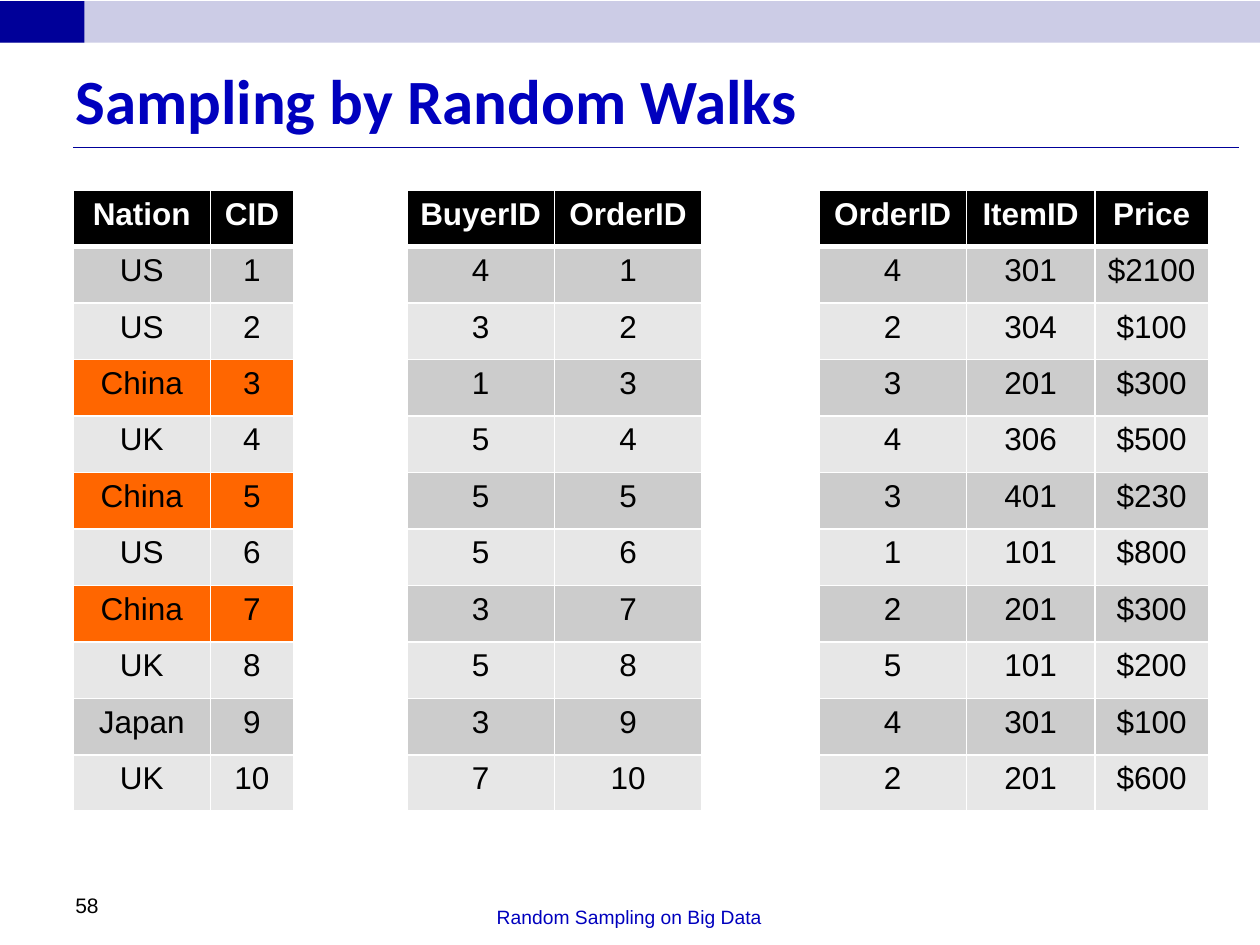
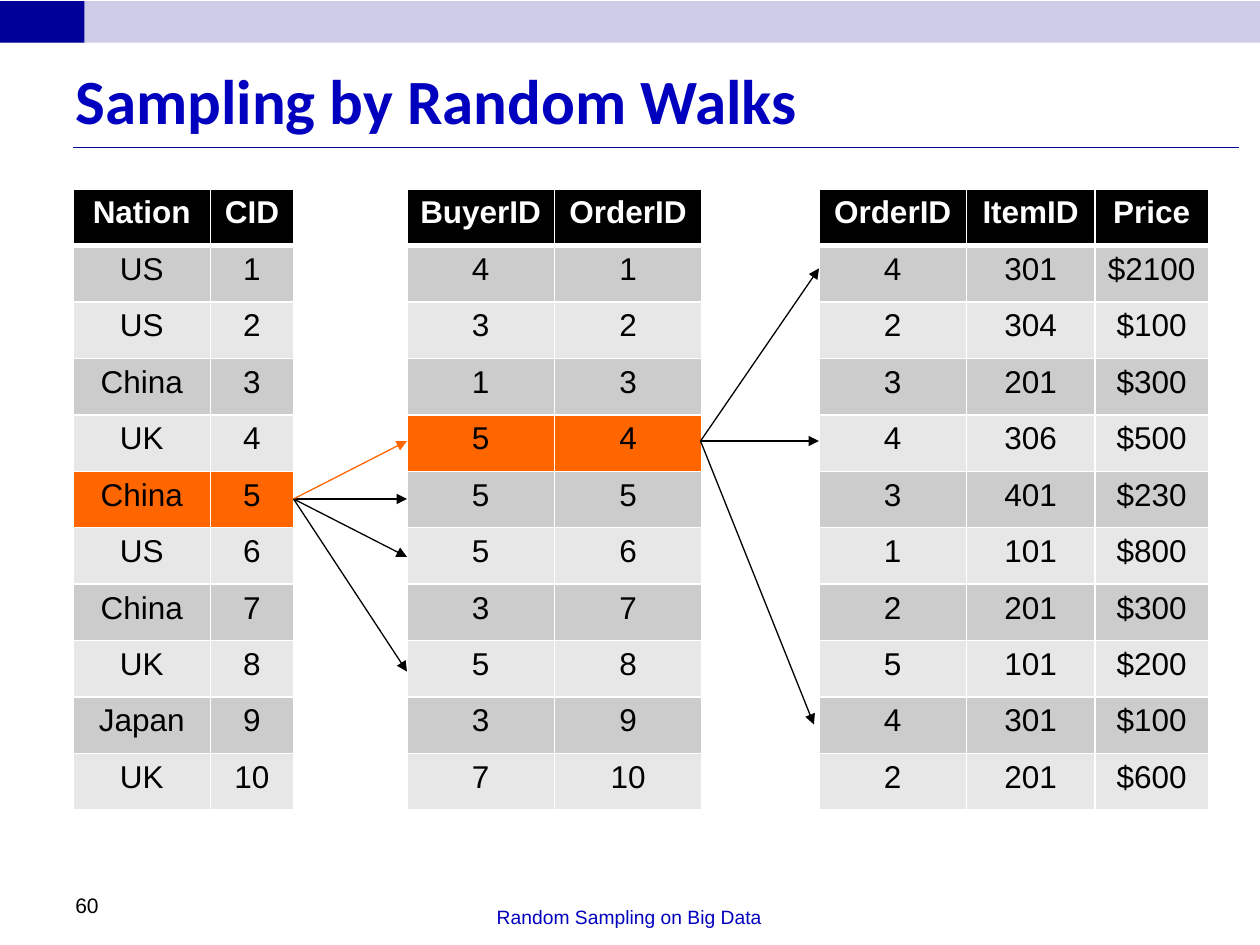
import dataclasses
import typing

import lxml.etree
import pptx
import pptx.dml.color
import pptx.enum.shapes
import pptx.enum.text
import pptx.oxml.ns
import pptx.util

Inches = pptx.util.Inches
Pt = pptx.util.Pt
ALIGN = pptx.enum.text.PP_ALIGN
ANCHOR = pptx.enum.text.MSO_ANCHOR

# Shared colours, fonts and measures
NAVY, LAVENDER, BLUE = "000099", "CCCCE6", "0000BE"
BLACK, WHITE, ORANGE = "000000", "FFFFFF", "FF6600"
STRIPES = ("E7E7E7", "CCCCCC")
BODY_FONT, TITLE_FONT = "Arial", "Calibri"
TABLE_HEIGHT = 4.93


@dataclasses.dataclass(frozen=True)
class Style:
    size: float
    color: str
    font: str = BODY_FONT
    bold: bool = False
    align: typing.Any = ALIGN.LEFT


@dataclasses.dataclass(frozen=True)
class Label:
    left: float
    top: float
    width: float
    height: float
    style: Style
    anchor: typing.Any = ANCHOR.BOTTOM


@dataclasses.dataclass(frozen=True)
class Relation:
    left: float
    widths: tuple[float, ...]
    header: tuple[str, ...]
    rows: tuple[tuple[str, ...], ...]


class Step(typing.NamedTuple):
    """Candidate moves from one row to rows of the next relation."""
    start: tuple[float, float]
    ends: tuple[tuple[float, float], ...]
    chosen: tuple[float, float] | None = None


@dataclasses.dataclass(frozen=True)
class WalkSlide:
    number: str
    top: float
    highlights: tuple[tuple[int, ...], ...]  # marked rows of each relation
    steps: tuple[Step, ...] = ()


TITLE = Label(0.5, 0.33, 9.5, 0.92, Style(36, BLUE, TITLE_FONT, True), ANCHOR.MIDDLE)
FOOTER = Label(2.58, 6.92, 4.83, 0.5, Style(11, BLUE, align=ALIGN.CENTER))
PAGE_NUMBER = Label(0.5, 6.83, 2.33, 0.5, Style(12, BLACK))
HEADER_CELL = Style(18, WHITE, bold=True, align=ALIGN.CENTER)
BODY_CELL = Style(18, BLACK, align=ALIGN.CENTER)


def numbered(values: str) -> tuple[tuple[str, ...], ...]:
    """Pair each value with its running ID."""
    return tuple((value, str(row)) for row, value in enumerate(values.split(), 1))


CUSTOMERS = Relation(0.58, (1.09, 0.66), ("Nation", "CID"),
                     numbered("US US China UK China US China UK Japan UK"))
ORDERS = Relation(3.23, (1.17, 1.17), ("BuyerID", "OrderID"),
                  numbered("4 3 1 5 5 5 3 5 3 7"))
ITEMS = Relation(6.5, (1.17, 1.02, 0.9), ("OrderID", "ItemID", "Price"), (
    ("4", "301", "$2100"), ("2", "304", "$100"), ("3", "201", "$300"),
    ("4", "306", "$500"), ("3", "401", "$230"), ("1", "101", "$800"),
    ("2", "201", "$300"), ("5", "101", "$200"), ("4", "301", "$100"),
    ("2", "201", "$600"),
))
RELATIONS = (CUSTOMERS, ORDERS, ITEMS)

SLIDES = (
    WalkSlide("58", 1.51, ((3, 5, 7), (), ())),
    WalkSlide("60", 1.5, ((5,), (4,), ()), (
        Step((2.33, 3.96), ((3.23, 5.33), (3.23, 3.96), (3.23, 3.5), (3.23, 4.42)),
             chosen=(3.23, 3.5)),
        Step((5.56, 3.5), ((6.5, 3.5), (6.5, 2.13), (6.46, 5.75))),
    )),
)


def rgb(color: str) -> pptx.dml.color.RGBColor:
    return pptx.dml.color.RGBColor.from_string(color)


def write(frame: typing.Any, text: str, style: Style) -> None:
    paragraph = frame.paragraphs[0]
    paragraph.alignment = style.align
    run = paragraph.add_run()
    run.text = text
    run.font.name = style.font
    run.font.size = Pt(style.size)
    run.font.bold = style.bold
    run.font.color.rgb = rgb(style.color)


def add_label(slide: typing.Any, label: Label, text: str) -> None:
    box = slide.shapes.add_textbox(Inches(label.left), Inches(label.top),
                                   Inches(label.width), Inches(label.height))
    box.text_frame.word_wrap = True
    box.text_frame.vertical_anchor = label.anchor
    write(box.text_frame, text, label.style)


def add_band(slide: typing.Any, width: float, color: str) -> None:
    band = slide.shapes.add_shape(pptx.enum.shapes.MSO_SHAPE.RECTANGLE,
                                  Inches(0), Inches(0.01), Inches(width), Inches(0.33))
    band.shadow.inherit = False
    band.fill.solid()
    band.fill.fore_color.rgb = rgb(color)
    band.line.fill.background()


def add_line(slide: typing.Any, start: tuple[float, float], end: tuple[float, float],
             color: str, arrow: bool = False) -> None:
    line = slide.shapes.add_connector(pptx.enum.shapes.MSO_CONNECTOR.STRAIGHT,
                                      *map(Inches, start + end))
    line.line.color.rgb = rgb(color)
    line.line.width = Pt(0.75)
    if arrow:
        lxml.etree.SubElement(line.line._get_or_add_ln(),
                              pptx.oxml.ns.qn("a:tailEnd"), type="triangle")
    lxml.etree.SubElement(line._element.spPr, pptx.oxml.ns.qn("a:effectLst"))


def set_borders(cell: typing.Any, row: int) -> None:
    """White rules, heavier between the header and the body."""
    heavy_side = {0: "lnB", 1: "lnT"}.get(row)
    properties = cell._tc.get_or_add_tcPr()
    for position, side in enumerate(("lnL", "lnR", "lnT", "lnB")):
        width = Pt(3 if side == heavy_side else 1)
        border = lxml.etree.Element(pptx.oxml.ns.qn(f"a:{side}"), w=str(int(width)))
        fill = lxml.etree.SubElement(border, pptx.oxml.ns.qn("a:solidFill"))
        lxml.etree.SubElement(fill, pptx.oxml.ns.qn("a:srgbClr"), val=WHITE)
        properties.insert(position, border)


def add_relation(slide: typing.Any, relation: Relation, top: float,
                 highlighted: tuple[int, ...]) -> None:
    lines = (relation.header, *relation.rows)
    table = slide.shapes.add_table(
        len(lines), len(relation.widths), Inches(relation.left), Inches(top),
        Inches(sum(relation.widths)), Inches(TABLE_HEIGHT)).table
    for column, width in zip(table.columns, relation.widths):
        column.width = Inches(width)
    for row, values in enumerate(lines):
        table.rows[row].height = Inches(TABLE_HEIGHT / len(lines))
        if row == 0:
            color, style = BLACK, HEADER_CELL
        else:
            color = ORANGE if row in highlighted else STRIPES[row % 2]
            style = BODY_CELL
        for column, value in enumerate(values):
            cell = table.cell(row, column)
            cell.fill.solid()
            cell.fill.fore_color.rgb = rgb(color)
            set_borders(cell, row)
            write(cell.text_frame, value, style)


def add_walk_slide(deck: typing.Any, walk: WalkSlide) -> None:
    slide = deck.slides.add_slide(deck.slide_layouts[6])
    # Top bands, title and rule
    add_band(slide, 10, LAVENDER)
    add_band(slide, 0.67, NAVY)
    add_line(slide, (0.58, 1.17), (9.83, 1.17), NAVY)
    add_label(slide, TITLE, "Sampling by Random Walks")
    # Relations and the steps between them
    for relation, highlighted in zip(RELATIONS, walk.highlights):
        add_relation(slide, relation, walk.top, highlighted)
    for step in walk.steps:
        for end in step.ends:
            color = ORANGE if end == step.chosen else BLACK
            add_line(slide, step.start, end, color, arrow=True)
    # Footer
    add_label(slide, FOOTER, "Random Sampling on Big Data")
    add_label(slide, PAGE_NUMBER, walk.number)


def main() -> None:
    deck = pptx.Presentation()
    deck.slide_width, deck.slide_height = Inches(10), Inches(7.5)
    for walk in SLIDES:
        add_walk_slide(deck, walk)
    deck.save("out.pptx")


if __name__ == "__main__":
    main()
